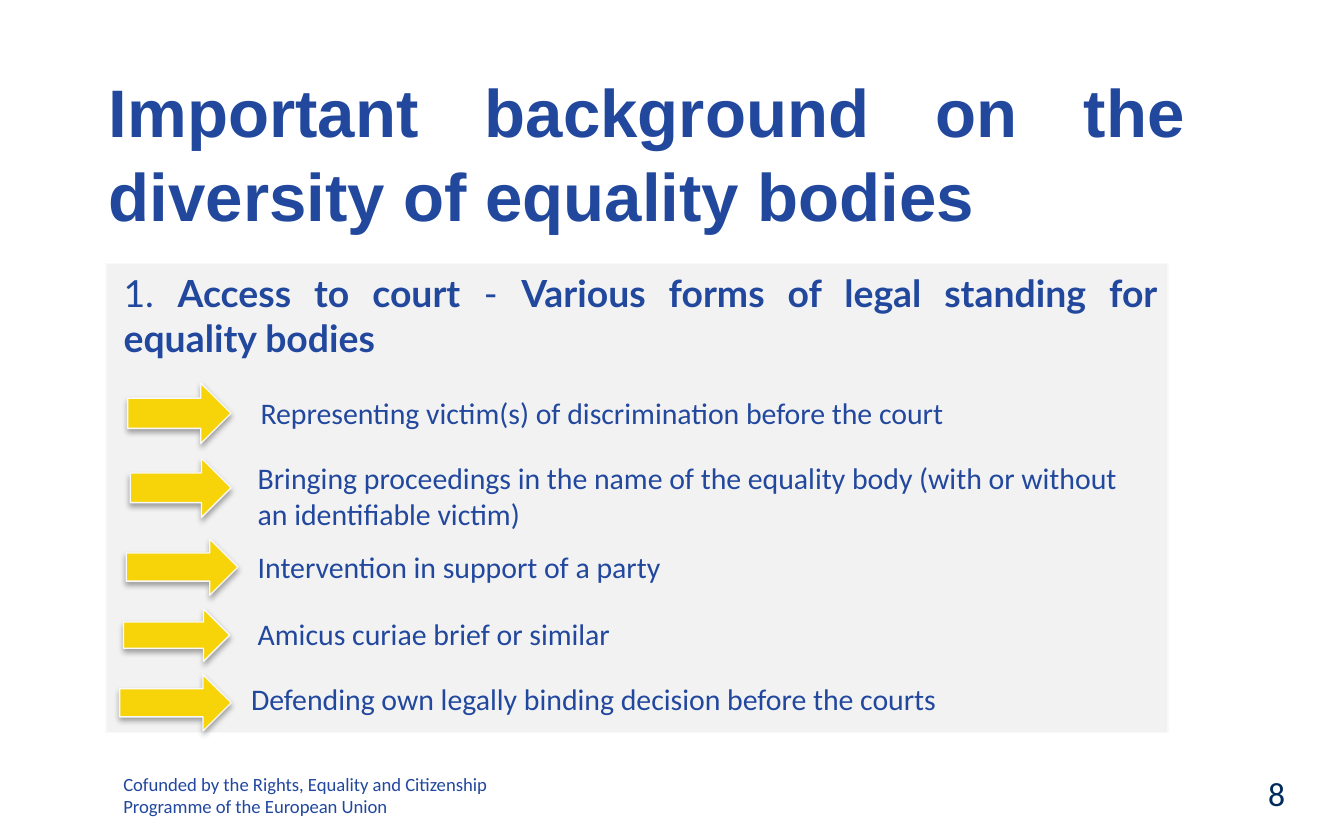
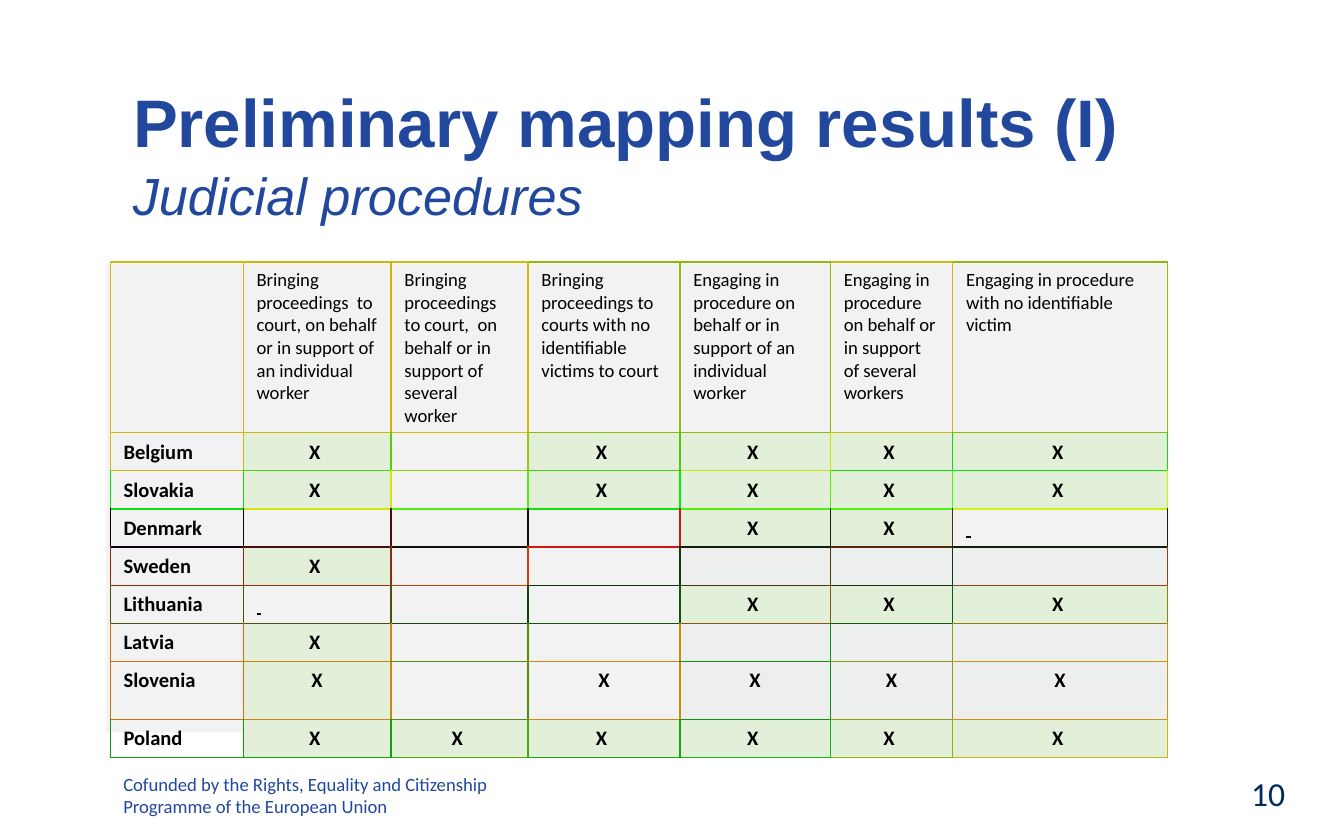
from dataclasses import dataclass
from typing import NamedTuple

from lxml import etree
from pptx import Presentation
from pptx.dml.color import RGBColor
from pptx.enum import shapes, text
from pptx.oxml import ns
from pptx.util import Pt


@dataclass(frozen=True)
class Theme:
    blue: str = "22489E"
    navy: str = "002B5C"
    black: str = "000000"
    panel: str = "F2F2F3"
    edge: str = "F9F9F9"
    gold: str = "F7D40A"
    green: str = "E2EFD9"
    grey: str = "EDEFEF"
    head: str = "Arial"
    lead: str = "Lato"
    sans: str = "Calibri"
    title: float = 36
    sub: float = 28
    intro: float = 20
    page: float = 18
    item: float = 16
    mark: float = 11
    small: float = 10
    rule: float = 0.75


T = Theme()


class Box(NamedTuple):
    left: float
    top: float
    width: float
    height: float

    def pts(self) -> tuple:
        return tuple(Pt(v) for v in self)


class Font(NamedTuple):
    name: str
    size: float
    color: str
    bold: bool = False
    italic: bool = False


class Item(NamedTuple):
    arrow: Box
    label: Box
    words: str


class Mark(NamedTuple):
    words: str = ""
    fill: str = ""
    under: bool = False


HEAD = Font(T.head, T.title, T.blue, bold=True)
SUB = Font(T.head, T.sub, T.blue, italic=True)
LEAD = Font(T.lead, T.intro, T.blue)
ITEM = Font(T.sans, T.item, T.blue)
FOOT = Font(T.sans, T.small, T.blue)
PAGE = Font(T.sans, T.page, T.navy)
COLUMN = Font(T.sans, T.small, T.black)
MARK = Font(T.sans, T.mark, T.black, bold=True)

PANEL = Box(56.9, 141.1, 568.8, 251.3)
CREDIT = Box(59, 410.4, 213.1, 31.7)
NUMBER = Box(527.8, 410.4, 167.8, 35.3)
FOOTER = "Cofunded by the Rights, Equality and Citizenship Programme of the European Union"

ITEMS = [
    Item(Box(68.4, 205.2, 55.4, 32.4), Box(132.5, 208.1, 428.4, 26.6),
         "Representing victim(s) of discrimination before the court"),
    Item(Box(69.8, 245.5, 54, 31.7), Box(131, 242.6, 489.6, 46.1),
         "Bringing proceedings in the name of the equality body "
         "(with or without an identifiable victim)"),
    Item(Box(67.7, 288.7, 59.8, 30.2), Box(131, 290.2, 486, 26.6),
         "Intervention in support of a party"),
    Item(Box(66.2, 326.2, 56.9, 28.1), Box(131, 326.2, 486, 26.6),
         "Amicus curiae brief or similar"),
    Item(Box(64.1, 361.4, 59.8, 30.2), Box(127.4, 361.4, 486, 26.6),
         "Defending own legally binding decision before the courts"),
]

GRID = Box(59, 140.4, 567.4, 267.8)
WIDTHS = [71.3, 79.2, 73.4, 81.4, 80.6, 65.5, 115.2]
HEIGHTS = [85] + [18.7] * 6 + [31, 18.7]
COLUMNS = [
    "",
    "Bringing proceedings  to court, on behalf or in support of an individual worker ",
    "Bringing proceedings to court,  on behalf or in support of several worker ",
    "Bringing proceedings to courts with no identifiable victims to court ",
    "Engaging in procedure on behalf or in support of an individual worker ",
    "Engaging in procedure on behalf or in support  of several workers ",
    "Engaging in procedure with no identifiable victim  ",
]
MARKS = {
    "X": Mark("X ", T.green),
    "Z": Mark("X", T.green),
    "x": Mark("X"),
    "y": Mark("X", T.grey),
    "g": Mark(fill=T.grey),
    "p": Mark(fill=T.panel),
    "_": Mark(" ", under=True),
    ".": Mark(),
}
STATES = {
    "Belgium": "X.XXXX",
    "Slovakia": "XpXXXX",
    "Denmark": "...XX_",
    "Sweden": "X..ggg",
    "Lithuania": "_..XXX",
    "Latvia": "X..ggg",
    "Slovenia": "Z.xyyy",
    "Poland": "XXXXXX",
}
RULES = [row.split() for row in (
    "D0B90E D0B40E D0BE0E 90B90E 90B70C D0B80C 90B90C",
    "D0B90C 50D00C 90CD0C 50C60C D0DE0C 10DA0C 10DF0C",
    "10DD0C D0E60C 50F10C 10E30C 50F20C 50F70C D0F10C",
    "10000D 500D0D 100F0D D0170D 101D0D 502A0D 10220D",
    "902A0D 902D0D D03E0D 10330D 50340D 10360D 90410D",
    "50510D 50500D 10460D 10550D 90550D 105C0D 90810D",
    "D0740D D0830D 508D0D D0890D 10920D 909C0D D0930D",
    "D0740D D0830D 508D0D D0890D 10920D 909C0D D0930D",
    "109C0D 10A30D 50A40D 10AC0D 10BB0D 90B50D D0B10D",
)]


def rgb(code: str) -> RGBColor:
    return RGBColor.from_string(code)


def sub(node, tag: str, **attrs):
    return etree.SubElement(node, ns.qn(tag), {k: str(v) for k, v in attrs.items()})


def style(font, look: Font) -> None:
    font.name, font.size = look.name, Pt(look.size)
    font.bold, font.italic = look.bold, look.italic
    font.color.rgb = rgb(look.color)


def place(shape, box: Box) -> None:
    shape.left, shape.top, shape.width, shape.height = box.pts()


def write(frame, words: str, look: Font, align=text.PP_ALIGN.LEFT):
    frame.word_wrap = True
    frame.vertical_anchor = text.MSO_ANCHOR.TOP
    para = frame.paragraphs[0]
    para.text = words
    para.alignment = align
    para.space_before = Pt(0)
    style(para.font, look)
    return para


def label(slide, box: Box, words: str, look: Font, align=text.PP_ALIGN.LEFT):
    return write(slide.shapes.add_textbox(*box.pts()).text_frame, words, look, align)


def block(slide, kind, box: Box, fill: str):
    shape = slide.shapes.add_shape(kind, *box.pts())
    shape.fill.solid()
    shape.fill.fore_color.rgb = rgb(fill)
    shape.line.color.rgb = rgb(T.edge)
    shape.line.width = Pt(T.rule)
    shape.shadow.inherit = False
    return shape


def arrow(slide, box: Box) -> None:
    shape = block(slide, shapes.MSO_SHAPE.RIGHT_ARROW, box, T.gold)
    effects = shape._element.spPr.find(ns.qn("a:effectLst"))
    shade = sub(effects, "a:outerShdw", blurRad=Pt(3.1), dist=Pt(1.8),
                dir=5400000, rotWithShape=0)
    sub(sub(shade, "a:srgbClr", val=T.black), "a:alpha", val=35000)


def start(deck, layout: int, title: str, box: Box, page: int):
    slide = deck.slides.add_slide(deck.slide_layouts[layout])
    panel = block(slide, shapes.MSO_SHAPE.RECTANGLE, PANEL, T.panel)
    slide.shapes._spTree.insert(2, panel._element)
    head = slide.shapes.title
    place(head, box)
    head.text_frame.auto_size = text.MSO_AUTO_SIZE.NONE
    para = write(head.text_frame, title, HEAD, text.PP_ALIGN.JUSTIFY)
    para.line_spacing = 1.05
    label(slide, CREDIT, FOOTER, FOOT)
    label(slide, NUMBER, str(page), PAGE, text.PP_ALIGN.RIGHT)
    return slide


def access(deck) -> None:
    slide = start(deck, 1, "Important background on the diversity of equality bodies",
                  Box(51.1, 31.7, 591.1, 84.2), 8)
    body = slide.placeholders[1]
    place(body, Box(59, 141.1, 568.1, 251.3))
    frame = body.text_frame
    frame.auto_size = text.MSO_AUTO_SIZE.NONE
    props = frame.paragraphs[0]._p.get_or_add_pPr()
    props.set("marL", "0")
    props.set("indent", "0")
    sub(props, "a:buNone")
    para = write(frame, "", LEAD, text.PP_ALIGN.JUSTIFY)
    for words, bold in (("1. ", False), ("Access to court", True), (" - ", False),
                        ("Various forms of legal standing for equality bodies", True)):
        run = para.add_run()
        run.text = words
        run.font.bold = bold
    for item in ITEMS:
        arrow(slide, item.arrow)
        label(slide, item.label, item.words, ITEM)


def border(cell, row: int, col: int) -> None:
    own = RULES[row][col]
    sides = {
        "a:lnL": RULES[row][col - 1] if col else own,
        "a:lnR": own,
        "a:lnT": RULES[row - 1][col] if row else own,
        "a:lnB": own,
    }
    props = cell._tc.get_or_add_tcPr()
    for spot, (tag, color) in enumerate(sides.items()):
        line = etree.Element(ns.qn(tag), w=str(Pt(T.rule)))
        sub(sub(line, "a:solidFill"), "a:srgbClr", val=color)
        props.insert(spot, line)


def fill(cell, mark: Mark, look: Font, align) -> None:
    if mark.fill:
        cell.fill.solid()
        cell.fill.fore_color.rgb = rgb(mark.fill)
    else:
        cell.fill.background()
    para = write(cell.text_frame, mark.words, look, align)
    if mark.under:
        para.font.underline = True
    if not mark.words:
        para._p.get_or_add_endParaRPr().set("sz", str(look.size * 100))


def mapping(deck) -> None:
    slide = start(deck, 5, "Preliminary mapping results (I)",
                  Box(64.1, 37.4, 591.1, 84.2), 10)
    para = label(slide, Box(64.1, 82.1, 591.1, 84.2), "Judicial procedures", SUB,
                 text.PP_ALIGN.JUSTIFY)
    para.line_spacing = 1.05
    table = slide.shapes.add_table(len(HEIGHTS), len(WIDTHS), *GRID.pts()).table
    table.first_row = table.horz_banding = False
    for col, width in zip(table.columns, WIDTHS):
        col.width = Pt(width)
    for row, height in zip(table.rows, HEIGHTS):
        row.height = Pt(height)
    left, mid = text.PP_ALIGN.LEFT, text.PP_ALIGN.CENTER
    for col, words in enumerate(COLUMNS):
        fill(table.cell(0, col), Mark(words), COLUMN, left)
    for row, (state, codes) in enumerate(STATES.items(), 1):
        fill(table.cell(row, 0), Mark(state), MARK, text.PP_ALIGN.JUSTIFY)
        for col, code in enumerate(codes, 1):
            mark = MARKS[code]
            fill(table.cell(row, col), mark, MARK, left if mark.under else mid)
    for row in range(len(HEIGHTS)):
        for col in range(len(WIDTHS)):
            border(table.cell(row, col), row, col)


def main() -> None:
    deck = Presentation()
    deck.slide_width, deck.slide_height = Pt(720), Pt(450)
    access(deck)
    mapping(deck)
    deck.save("out.pptx")


if __name__ == "__main__":
    main()
